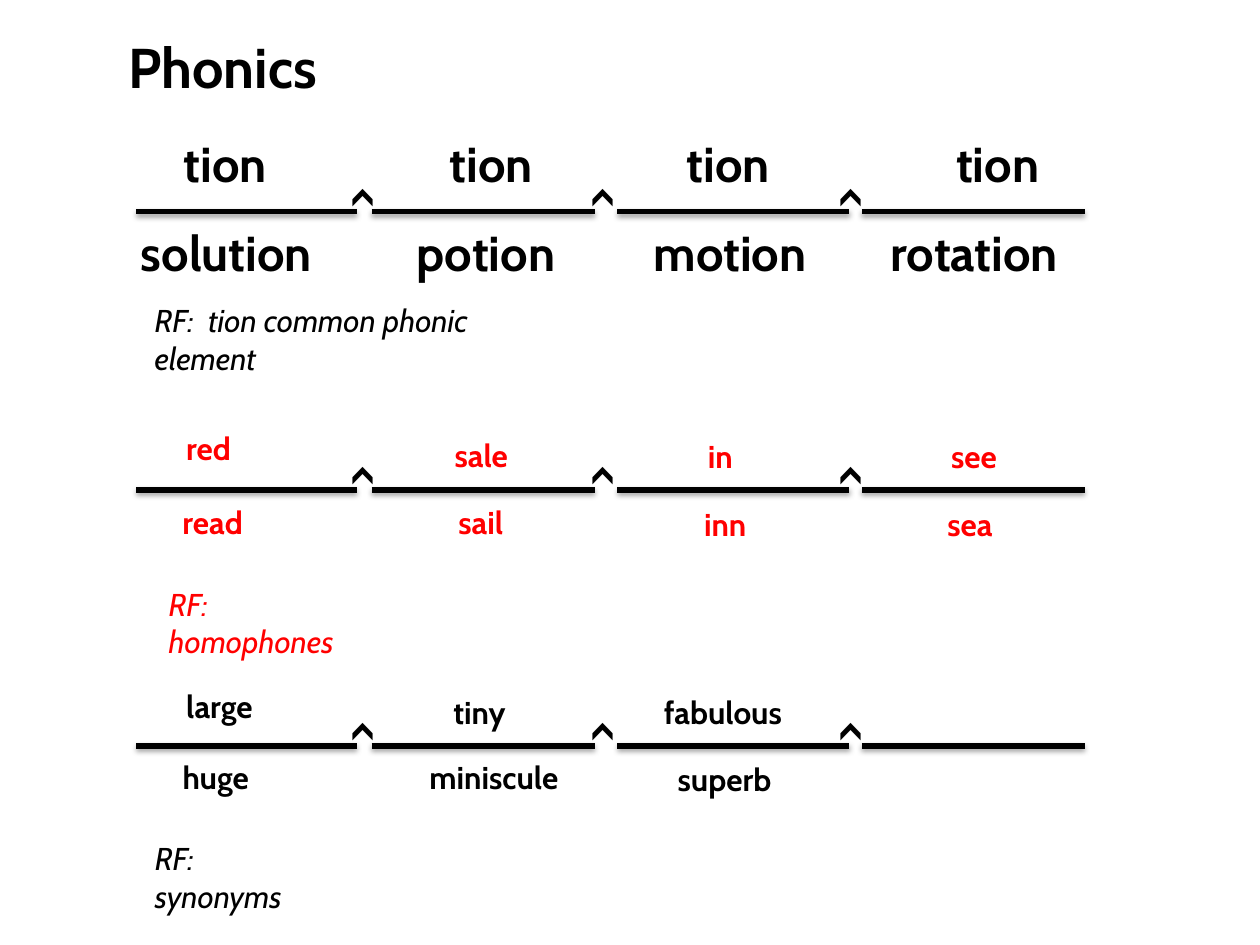
from lxml import etree
from pptx import Presentation
from pptx.dml.color import RGBColor
from pptx.enum.shapes import MSO_CONNECTOR
from pptx.enum.text import MSO_AUTO_SIZE
from pptx.oxml import parse_xml
from pptx.oxml.ns import nsdecls, qn
from pptx.util import Inches, Pt

COLORS = {"black": "000000", "red": "FF0000"}
FONT = "Cabin"
TEXT_HEIGHTS = {18: 0.4, 28: 0.57, 32: 0.64}

# Offsets in inches from the left end and the height of a row's line
BLANKS = [(0, 1.75), (1.87, 3.64), (3.82, 5.66), (5.76, 7.53)]
CARET_LEFTS = [1.6, 3.51, 5.48]
CARET_RISE = 0.32
CARET_WIDTH = 0.46

ROW_LEFT = 1.08
# Words: text, left offset, top offset, width. Notes: text, left, top, width.
ROWS = [
    {
        "top": 1.68, "size": 28, "color": "black",
        "words": [
            ("tion", 0.28, -0.67, 1.01), ("solution", -0.06, 0.04, 1.82),
            ("tion", 2.39, -0.67, 1.01), ("potion", 2.13, 0.04, 1.51),
            ("tion", 4.27, -0.67, 1.01), ("motion", 4.01, 0.04, 1.65),
            ("tion", 6.41, -0.67, 1.01), ("rotation", 5.89, 0.04, 1.84),
        ],
        "note": ("RF:  tion common phonic element", 0.05, 0.66, 3.4),
    },
    {
        "top": 3.89, "size": 18, "color": "red",
        "words": [
            ("red", 0.3, -0.53, 0.63), ("read", 0.27, 0.05, 0.77),
            ("sale", 2.43, -0.48, 0.7), ("sail", 2.46, 0.05, 0.63),
            ("in", 4.44, -0.47, 0.44), ("inn", 4.41, 0.07, 0.6),
            ("see", 6.37, -0.47, 0.63), ("sea", 6.34, 0.07, 0.62),
        ],
        "note": ("RF:  homophones", 0.16, 0.7, 1.85),
    },
    {
        "top": 5.92, "size": 18, "color": "black",
        "words": [
            ("large", 0.3, -0.52, 0.84), ("huge", 0.27, 0.05, 0.82),
            ("tiny", 2.42, -0.47, 0.71), ("miniscule", 2.23, 0.05, 1.41),
            ("fabulous", 4.09, -0.47, 1.29), ("superb", 4.2, 0.06, 1.08),
        ],
        "note": ("RF:  synonyms", 0.05, 0.69, 1.55),
    },
]


def add_text(shapes, text, left, top, width, size=18, color="black",
             bold=False, italic=False):
    box = shapes.add_textbox(Inches(left), Inches(top), Inches(width),
                             Inches(TEXT_HEIGHTS[size]))
    frame = box.text_frame
    frame.word_wrap = True
    frame.auto_size = MSO_AUTO_SIZE.SHAPE_TO_FIT_TEXT
    run = frame.paragraphs[0].add_run()
    run.text = text
    run.font.name = FONT
    run.font.size = Pt(size)
    run.font.bold = bold
    run.font.italic = italic
    run.font.color.rgb = RGBColor.from_string(COLORS[color])
    return box


def add_soft_shadow(connector):
    properties = connector._element.find(qn("p:spPr"))
    effects = etree.SubElement(properties, qn("a:effectLst"))
    effects.append(parse_xml(
        f'<a:outerShdw {nsdecls("a")} blurRad="{Pt(3.1)}" dist="{Pt(1.6)}" '
        'dir="5400000" rotWithShape="0"><a:srgbClr val="000000">'
        '<a:alpha val="38000"/></a:srgbClr></a:outerShdw>'))


def add_blanks(shapes, left, top):
    """Group four writing lines with a caret above each gap."""
    group = shapes.add_group_shape()
    for start, end in BLANKS:
        line = group.shapes.add_connector(
            MSO_CONNECTOR.STRAIGHT, Inches(left + start), Inches(top),
            Inches(left + end), Inches(top))
        line.line.color.rgb = RGBColor.from_string(COLORS["black"])
        line.line.width = Pt(3)
        add_soft_shadow(line)
    for offset in CARET_LEFTS:
        add_text(group.shapes, "^", left + offset, top - CARET_RISE,
                 CARET_WIDTH, size=28, bold=True)


def add_word_row(shapes, left, top, size, color, words, note):
    add_blanks(shapes, left, top)
    for text, across, down, width in words:
        add_text(shapes, text, left + across, top + down, width,
                 size=size, color=color, bold=True)
    text, across, down, width = note
    add_text(shapes, text, left + across, top + down, width,
             color=color, italic=True)


def main():
    presentation = Presentation()
    presentation.slide_width = Inches(10)
    presentation.slide_height = Inches(7.5)
    slide = presentation.slides.add_slide(presentation.slide_layouts[6])
    add_text(slide.shapes, "Phonics", 0.92, 0.21, 1.96, size=32, bold=True)
    for row in ROWS:
        add_word_row(slide.shapes, ROW_LEFT, **row)
    presentation.save("out.pptx")


if __name__ == "__main__":
    main()
